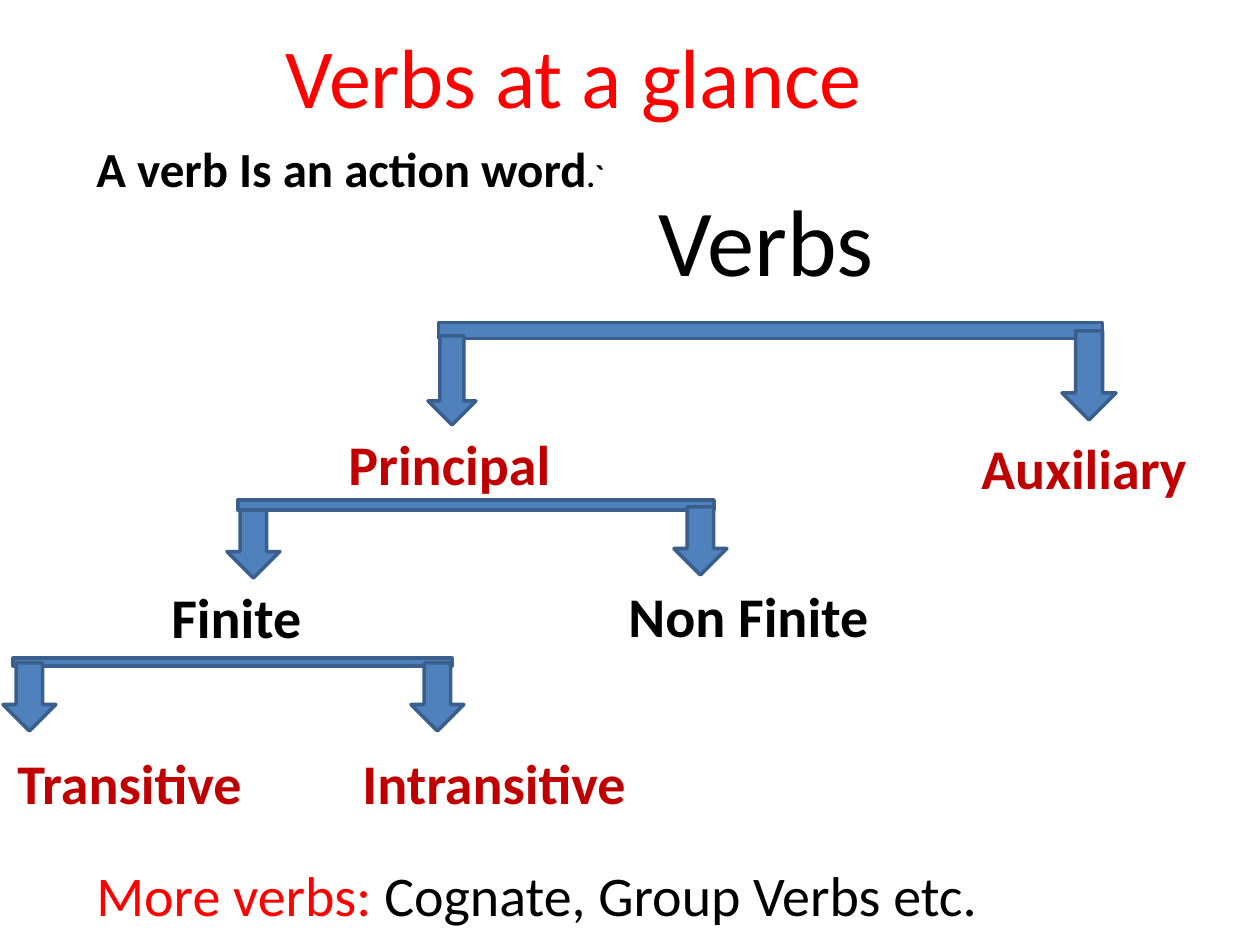
import pptx
import pptx.dml.color
import pptx.enum.shapes
import pptx.enum.text
import pptx.util

SCALE = 914400 / 126
FONT = "Calibri"
RED, CRIMSON, BLACK = "FF0000", "C00000", "000000"
BLUE, NAVY = "4F81BD", "3A5F8C"
SHAPES = pptx.enum.shapes.MSO_SHAPE


def px(length):
    """Turn pixels into EMU."""
    return pptx.util.Emu(round(length * SCALE))


def color(value):
    """Turn a hex string into a colour."""
    return pptx.dml.color.RGBColor.from_string(value)


class SlideBuilder:
    """Holds the style and the current slide."""

    def __init__(self, presentation):
        """Add a slide that has only a title."""
        self.slide = presentation.slides.add_slide(presentation.slide_layouts[5])

    def add_runs(self, shape, runs):
        """Fill a shape with left-aligned runs of (text, size, colour, bold)."""
        frame = shape.text_frame
        frame.word_wrap = True
        frame.auto_size = pptx.enum.text.MSO_AUTO_SIZE.SHAPE_TO_FIT_TEXT
        frame.vertical_anchor = pptx.enum.text.MSO_ANCHOR.TOP
        paragraph = frame.paragraphs[0]
        paragraph.alignment = pptx.enum.text.PP_ALIGN.LEFT
        for text, size, fill, bold in runs:
            run = paragraph.add_run()
            run.text = text
            run.font.name = FONT
            run.font.size = pptx.util.Pt(size)
            run.font.bold = bold
            run.font.color.rgb = color(fill)

    def title(self, left, top, width, height, runs):
        """Place and fill the title."""
        shape = self.slide.shapes.title
        shape.left, shape.top = px(left), px(top)
        shape.width, shape.height = px(width), px(height)
        self.add_runs(shape, runs)

    def text(self, left, top, width, height, runs):
        """Add a text box."""
        box = self.slide.shapes.add_textbox(px(left), px(top), px(width), px(height))
        self.add_runs(box, runs)

    def label(self, left, top, width, text, fill):
        """Add the bold name of a kind of verb."""
        self.text(left, top, width, 81, [(text, 32, fill, True)])

    def block(self, kind, left, top, width, height):
        """Add an outlined blue shape."""
        shape = self.slide.shapes.add_shape(
            kind, px(left), px(top), px(width), px(height))
        shape.shadow.inherit = False
        shape.fill.solid()
        shape.fill.fore_color.rgb = color(BLUE)
        shape.line.color.rgb = color(NAVY)
        shape.line.width = pptx.util.Pt(2)

    def branch(self, bar, arrows):
        """Add a bar with the arrows that hang from it."""
        self.block(SHAPES.MATH_MINUS, *bar)
        for arrow in arrows:
            self.block(SHAPES.DOWN_ARROW, *arrow)


def main():
    """Build the slide and save it."""
    presentation = pptx.Presentation()
    presentation.slide_width, presentation.slide_height = px(1260), px(945)
    builder = SlideBuilder(presentation)

    builder.title(273, 18, 662, 115, [("Verbs at a glance", 48, RED, False)])
    builder.text(84, 132, 546, 72, [
        ("A verb Is an action word", 28, BLACK, True), (".`", 18, BLACK, True)])
    builder.text(646, 176, 246, 127, [("Verbs", 54, BLACK, False)])

    builder.branch((319, 296, 903, 69), [(428, 336, 48, 89), (1062, 331, 54, 89)])
    builder.branch((152, 484, 648, 42), [(227, 510, 53, 68), (674, 507, 53, 68)])
    builder.branch((-66, 646, 597, 32), [(3, 663, 53, 68), (411, 663, 53, 68)])

    for label in [
        (336, 423, 255, "Principal", CRIMSON),
        (969, 427, 242, "Auxiliary", CRIMSON),
        (159, 576, 179, "Finite", BLACK),
        (616, 575, 269, "Non Finite", BLACK),
        (5, 742, 262, "Transitive", CRIMSON),
        (350, 742, 298, "Intransitive", CRIMSON),
    ]:
        builder.label(*label)

    builder.text(84, 854, 934, 81, [
        ("More verbs: ", 32, RED, False),
        ("Cognate, Group Verbs etc.", 32, BLACK, False)])
    presentation.save("out.pptx")


if __name__ == "__main__":
    main()
